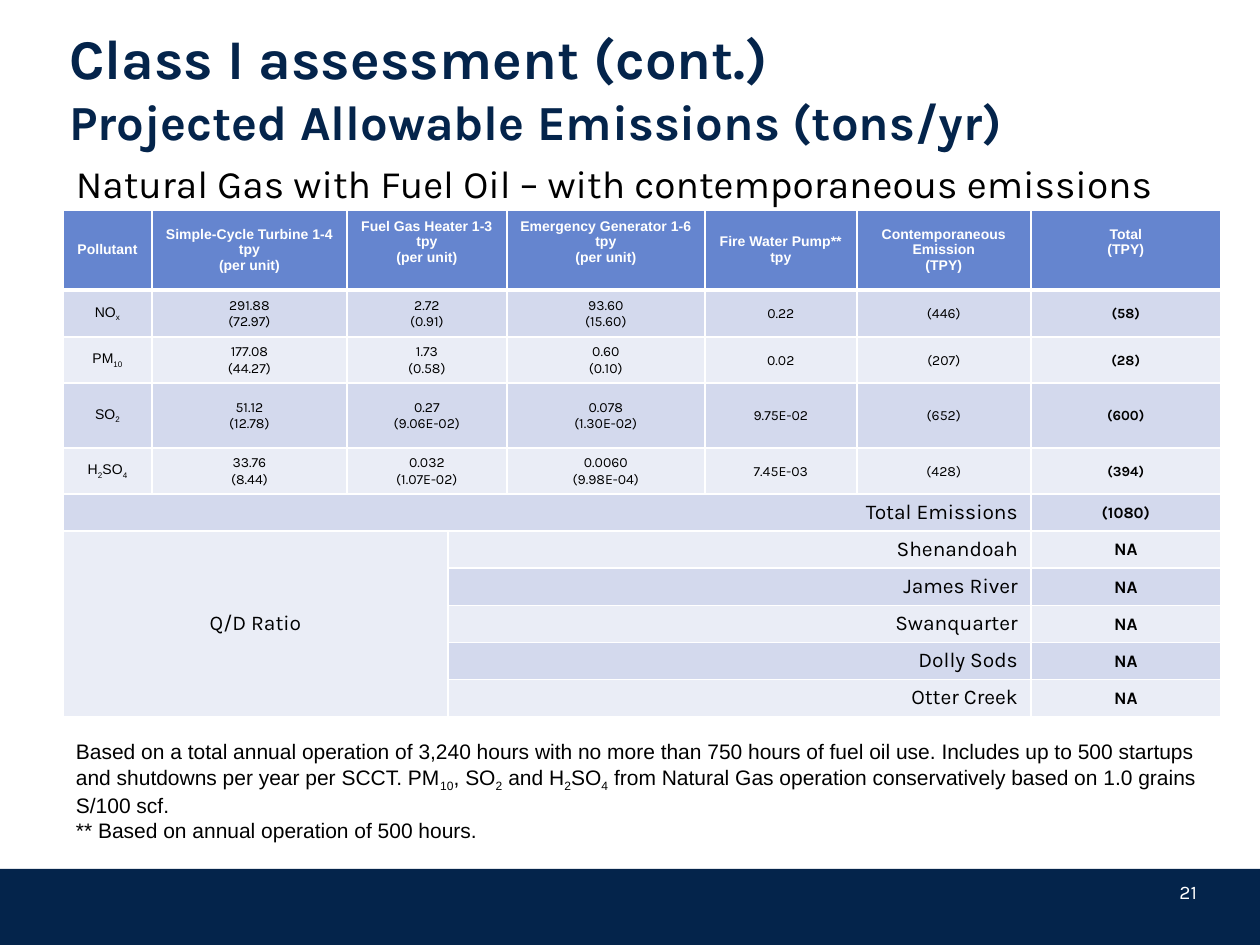
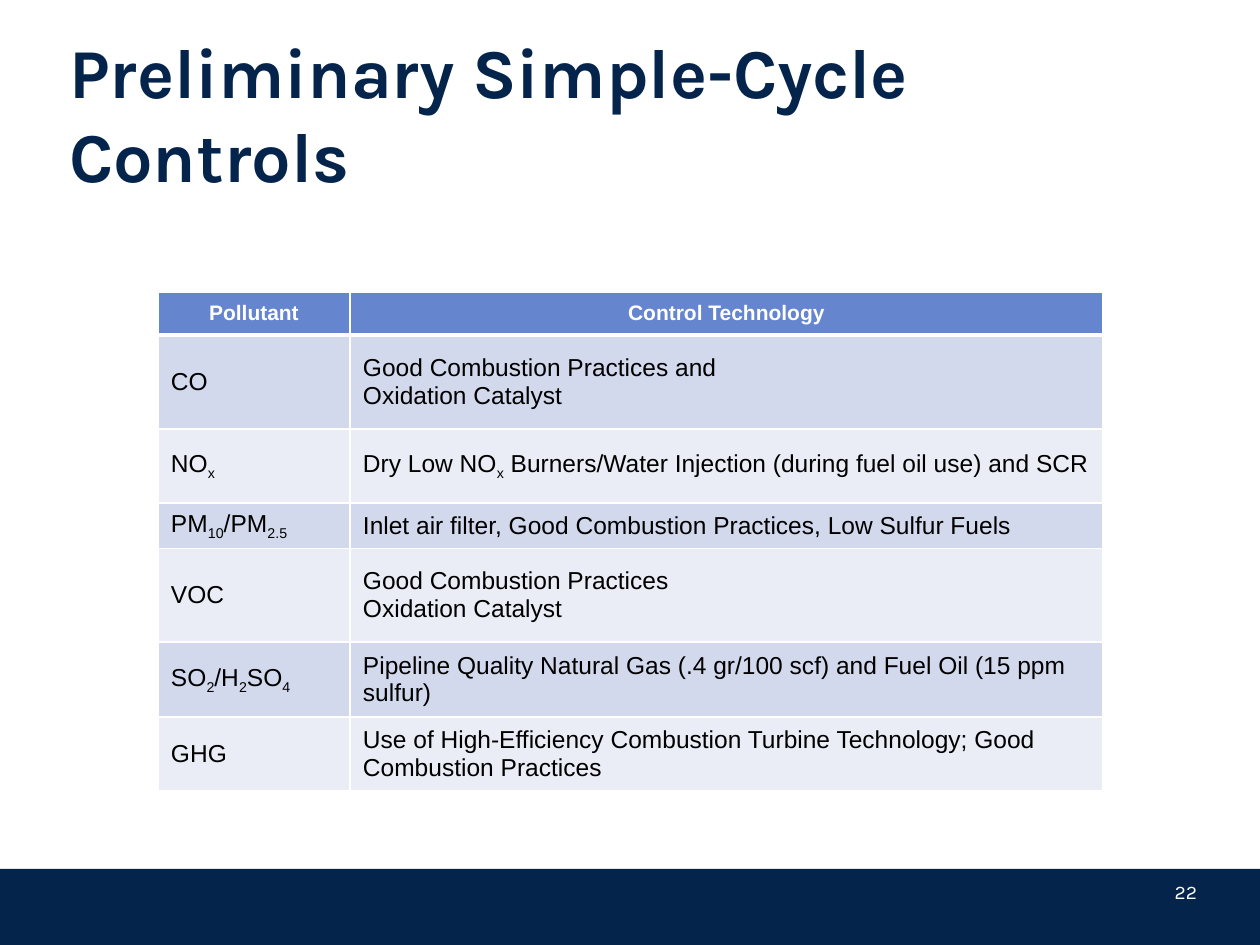
from dataclasses import dataclass

from lxml import etree
from pptx import Presentation
from pptx.dml.color import RGBColor
from pptx.enum.shapes import MSO_SHAPE
from pptx.enum.text import MSO_ANCHOR, MSO_AUTO_SIZE, PP_ALIGN
from pptx.oxml.ns import qn
from pptx.util import Emu, Pt

LEFT, CENTER, RIGHT = PP_ALIGN.LEFT, PP_ALIGN.CENTER, PP_ALIGN.RIGHT
TOP, MIDDLE, BOTTOM = MSO_ANCHOR.TOP, MSO_ANCHOR.MIDDLE, MSO_ANCHOR.BOTTOM
NO_AUTOFIT = MSO_AUTO_SIZE.NONE
RECTANGLE = MSO_SHAPE.RECTANGLE

EMU_PER_PX = 914400 // 126
SLIDE_WIDTH, SLIDE_HEIGHT = 1260, 945
DEFAULT_MARGINS = (13, 6, 13, 6)
TIGHT_MARGINS = (1, 1, 1, 0)
RAISED_MARGINS = (13, 6, 13, 22)
NO_MARGINS = (0, 0, 0, 0)


# Colours, fonts and type sizes
@dataclass(frozen=True)
class Theme:
    navy: str = "04244B"
    white: str = "FFFFFF"
    black: str = "000000"
    header: str = "6585CF"
    bands: tuple = ("EAEDF6", "D3D9ED")
    display: str = "Karla"
    body: str = "Arial"
    title: int = 40
    long_title: int = 32
    second_title: int = 28
    subtitle: float = 22.2
    technology: int = 14
    text: int = 12
    page_number: int = 11
    ratio: int = 10
    total: int = 9
    small: int = 8


THEME = Theme()


@dataclass(frozen=True)
class Style:
    size: float
    font: str = THEME.body
    color: str = THEME.black
    bold: bool = False
    align: int = LEFT


EMISSION_HEADERS = [
    (0, "Pollutant", DEFAULT_MARGINS),
    (1, "Simple-Cycle Turbine 1-4\ntpy\n(per unit)", DEFAULT_MARGINS),
    (2, "Fuel Gas Heater 1-3\ntpy\n(per unit)", RAISED_MARGINS),
    (4, "Emergency Generator 1-6\ntpy\n(per unit)", RAISED_MARGINS),
    (5, "Fire Water Pump**\ntpy", DEFAULT_MARGINS),
    (6, "Contemporaneous Emission\n(TPY)", DEFAULT_MARGINS),
    (7, "Total\n(TPY)", RAISED_MARGINS),
]
# Text between bars is subscript
EMISSIONS = [
    ("NO|x|", "291.88\n(72.97)", "2.72\n(0.91)", "93.60\n(15.60)", "0.22", "(446)", "(58)"),
    ("PM|10|", "177.08\n(44.27)", "1.73\n(0.58)", "0.60\n(0.10)", "0.02", "(207)", "(28)"),
    ("SO|2|", "51.12\n(12.78)", "0.27\n(9.06E-02)", "0.078\n(1.30E-02)", "9.75E-02",
     "(652)", "(600)"),
    ("H|2|SO|4|", "33.76\n(8.44)", "0.032\n(1.07E-02)", "0.0060\n(9.98E-04)", "7.45E-03",
     "(428)", "(394)"),
]
AREAS = ["Shenandoah", "James River", "Swanquarter", "Dolly Sods", "Otter Creek"]
FOOTNOTE = (
    "Based on a total annual operation of 3,240 hours with no more than 750 hours of fuel oil "
    "use. Includes up to 500 startups and shutdowns per year per SCCT. PM|10|, SO|2| and "
    "H|2|SO|4| from Natural Gas operation conservatively based on 1.0 grains S/100 scf.\n"
    "** Based on annual operation of 500 hours."
)
CONTROLS = [
    ("CO", "Good Combustion Practices and\nOxidation Catalyst"),
    ("NO|x|", "Dry Low NO|x| Burners/Water Injection (during fuel oil use) and SCR"),
    ("PM|10|/PM|2.5|", "Inlet air filter, Good Combustion Practices, Low Sulfur Fuels"),
    ("VOC", "Good Combustion Practices\nOxidation Catalyst"),
    ("SO|2|/H|2|SO|4|",
     "Pipeline Quality Natural Gas (.4 gr/100 scf) and Fuel Oil (15 ppm sulfur)"),
    ("GHG", "Use of High-Efficiency Combustion Turbine Technology; Good Combustion Practices"),
]


def px(length):
    return Emu(length * EMU_PER_PX)


def rgb(color):
    return RGBColor.from_string(color)


# Text
def add_run(paragraph, text, style, subscript=False):
    run = paragraph.add_run()
    run.text = text
    font = run.font
    font.name, font.size, font.bold = style.font, Pt(style.size), style.bold
    font.color.rgb = rgb(style.color)
    if subscript:
        font._element.set("baseline", "-25000")


def write_text(frame, text, style):
    for index, line in enumerate(text.split("\n")):
        paragraph = frame.add_paragraph() if index else frame.paragraphs[0]
        paragraph.alignment = style.align
        for position, piece in enumerate(line.split("|")):
            if piece:
                add_run(paragraph, piece, style, subscript=position % 2 == 1)


def set_margins(target, margins):
    left, top, right, bottom = map(px, margins)
    target.margin_left, target.margin_top = left, top
    target.margin_right, target.margin_bottom = right, bottom


def add_text(slide, box, text, style, margins=DEFAULT_MARGINS, anchor=TOP):
    frame = slide.shapes.add_textbox(*map(px, box)).text_frame
    frame.word_wrap = True
    frame.vertical_anchor = anchor
    set_margins(frame, margins)
    write_text(frame, text, style)


# Slide frame: title, bottom band and page number
def add_slide(presentation, number, title_box, title_lines):
    slide = presentation.slides.add_slide(presentation.slide_layouts[5])
    band = slide.shapes.add_shape(RECTANGLE, px(0), px(869), px(SLIDE_WIDTH), px(76))
    band.shadow.inherit = False
    band.fill.solid()
    band.fill.fore_color.rgb = rgb(THEME.navy)
    band.line.fill.background()

    title = slide.shapes.title
    title.left, title.top, title.width, title.height = map(px, title_box)
    frame = title.text_frame
    frame.word_wrap = True
    frame.auto_size = NO_AUTOFIT
    frame.vertical_anchor = BOTTOM
    set_margins(frame, (6, 0, 6, 0))
    paragraph = frame.paragraphs[0]
    paragraph.alignment = LEFT
    for index, (text, size) in enumerate(title_lines):
        if index:
            paragraph.add_line_break()
        add_run(paragraph, text, Style(size, THEME.display, THEME.navy, bold=True))

    number_style = Style(THEME.page_number, THEME.display, THEME.white, align=RIGHT)
    add_text(slide, (1116, 872, 81, 31), str(number), number_style, NO_MARGINS, BOTTOM)
    return slide


# Tables
def set_border(cell, side, width):
    line = etree.SubElement(cell._tc.get_or_add_tcPr(), qn(f"a:ln{side}"), w=str(Pt(width)))
    fill = etree.SubElement(line, qn("a:solidFill"))
    etree.SubElement(fill, qn("a:srgbClr"), val=THEME.white)


def add_table(slide, left, top, widths, heights):
    table = slide.shapes.add_table(
        len(heights), len(widths), px(left), px(top), px(sum(widths)), px(sum(heights))
    ).table
    for column, width in zip(table.columns, widths):
        column.width = px(width)
    for index, (row, height) in enumerate(zip(table.rows, heights)):
        row.height = px(height)
        for cell in row.cells:
            set_border(cell, "L", 1)
            set_border(cell, "R", 1)
            set_border(cell, "T", 3 if index == 1 else 1)
            set_border(cell, "B", 3 if index == 0 else 1)
            cell.fill.solid()
            cell.fill.fore_color.rgb = rgb(THEME.bands[index % 2] if index else THEME.header)
    return table


def fill_cell(table, row, column, text, style, margins=DEFAULT_MARGINS, anchor=MIDDLE):
    cell = table.cell(row, column)
    cell.vertical_anchor = anchor
    set_margins(cell, margins)
    write_text(cell.text_frame, text, style)


def merge(table, row, column, last_row, last_column):
    table.cell(row, column).merge(table.cell(last_row, last_column))


# Slide contents
def build_emissions(presentation):
    slide = add_slide(presentation, 21, (63, 16, 1134, 134), [
        ("Class I assessment (cont.)", THEME.long_title),
        ("Projected Allowable Emissions (tons/yr)", THEME.second_title),
    ])
    add_text(slide, (63, 154, 1134, 56),
             "Natural Gas with Fuel Oil – with contemporaneous emissions",
             Style(THEME.subtitle, THEME.display))

    total_row = len(EMISSIONS) + 1
    first_area, last_area = total_row + 1, total_row + len(AREAS)
    table = add_table(slide, 63, 210, [89, 195, 101, 59, 198, 152, 174, 190],
                      [80, 47, 46, 65, 46] + [37] * (1 + len(AREAS)))
    for row in range(total_row):
        merge(table, row, 2, row, 3)
    merge(table, total_row, 0, total_row, 6)
    merge(table, first_area, 0, last_area, 2)

    header = Style(THEME.small, color=THEME.white, bold=True, align=CENTER)
    pollutant = Style(THEME.small, align=CENTER)
    value = Style(THEME.small, THEME.display, align=CENTER)
    row_total = Style(THEME.small, THEME.display, bold=True, align=CENTER)
    for column, text, margins in EMISSION_HEADERS:
        fill_cell(table, 0, column, text, header, margins)
    columns = [column for column, _, _ in EMISSION_HEADERS]
    for row, (name, *values, total) in enumerate(EMISSIONS, start=1):
        fill_cell(table, row, 0, name, pollutant)
        for column, text in zip(columns[1:], values):
            fill_cell(table, row, column, text, value, TIGHT_MARGINS)
        fill_cell(table, row, 7, total, row_total, TIGHT_MARGINS)

    label = Style(THEME.text, THEME.display, align=RIGHT)
    fill_cell(table, total_row, 0, "Total Emissions", label)
    fill_cell(table, total_row, 7, "(1080)",
              Style(THEME.total, THEME.display, bold=True, align=CENTER), TIGHT_MARGINS)
    fill_cell(table, first_area, 0, "Q/D Ratio", Style(THEME.text, THEME.display, align=CENTER))
    ratio = Style(THEME.ratio, THEME.display, bold=True, align=CENTER)
    for row, area in enumerate(AREAS, start=first_area):
        merge(table, row, 3, row, 6)
        fill_cell(table, row, 3, area, label, anchor=TOP)
        fill_cell(table, row, 7, "NA", ratio, TIGHT_MARGINS)

    add_text(slide, (63, 733, 1149, 115), FOOTNOTE, Style(THEME.text))


def build_controls(presentation):
    slide = add_slide(presentation, 22, (63, 39, 1134, 158),
                      [("Preliminary Simple-Cycle Controls", THEME.title)])
    table = add_table(slide, 158, 292, [192, 753], [43, 94, 74, 44, 94, 75, 74])
    header = Style(THEME.text, color=THEME.white, bold=True, align=CENTER)
    for column, text in enumerate(("Pollutant", "Control Technology")):
        fill_cell(table, 0, column, text, header)
    for row, texts in enumerate(CONTROLS, start=1):
        for column, text in enumerate(texts):
            fill_cell(table, row, column, text, Style(THEME.technology))


def main():
    presentation = Presentation()
    presentation.slide_width, presentation.slide_height = px(SLIDE_WIDTH), px(SLIDE_HEIGHT)
    build_emissions(presentation)
    build_controls(presentation)
    presentation.save("out.pptx")


if __name__ == "__main__":
    main()
